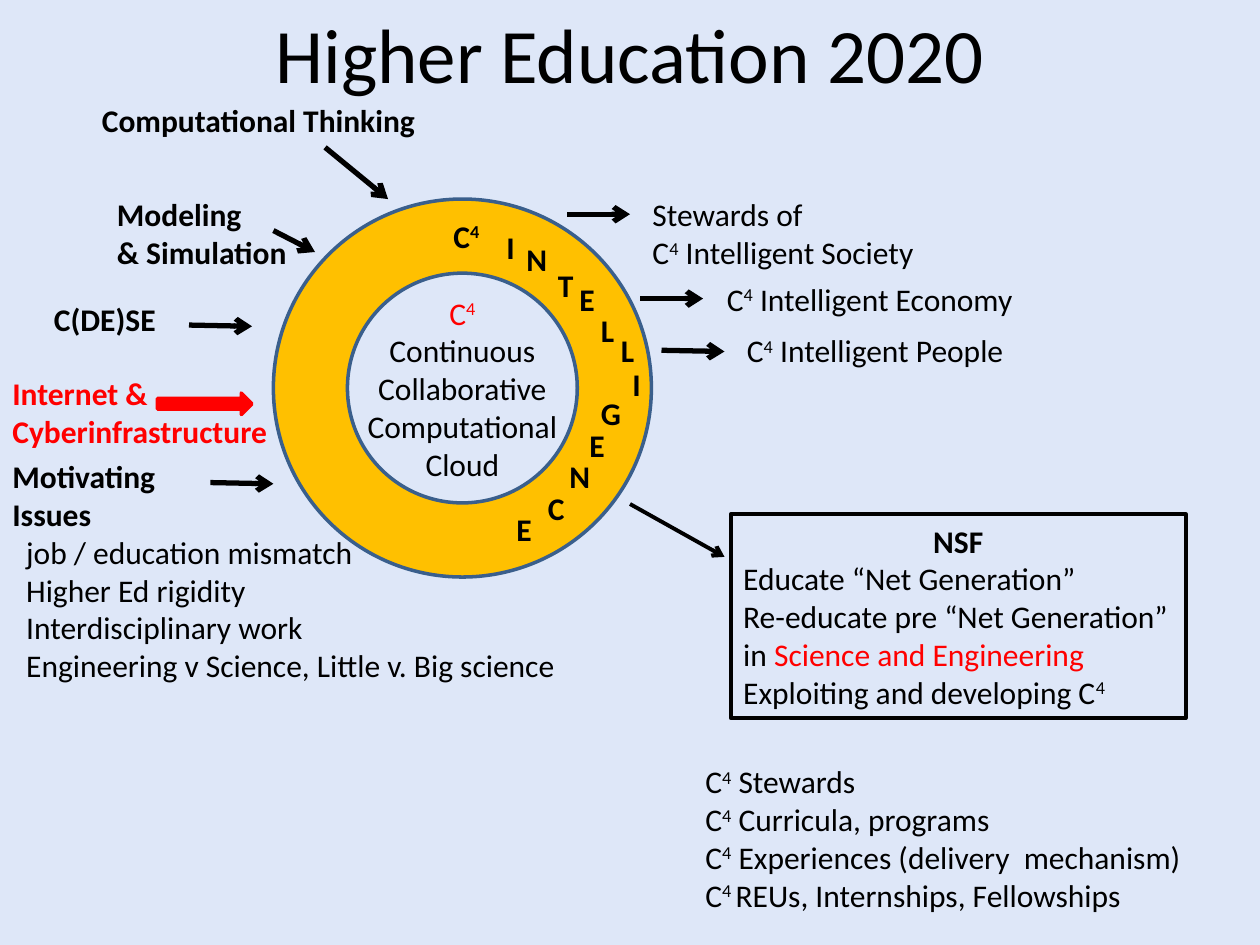
from dataclasses import dataclass
from typing import NamedTuple

from lxml import etree
from pptx import Presentation
from pptx import util as u
from pptx.dml.color import RGBColor
from pptx.enum import shapes, text
from pptx.oxml.ns import qn

COLORS = {"background": "DEE7F8", "ring": "FFC000", "ring_line": "3A5F8C",
          "black": "000000", "red": "FF0000"}
FONT = "Calibri"


class Run(NamedTuple):
    text: str
    color: str = "black"
    bold: bool = False
    raised: bool = False


class Line(NamedTuple):
    runs: list[Run]
    centered: bool = False
    indent: float = 0


@dataclass
class Label:
    left: float
    top: float
    width: float
    height: float
    lines: list[Line]
    wrap: bool = False


class Arrow(NamedTuple):
    x1: float
    y1: float
    x2: float
    y2: float
    weight: float = 3


def line(words: str, color: str = "black", bold: bool = False,
         centered: bool = False, indent: float = 0) -> Line:
    return Line([Run(words, color, bold)], centered, indent)


def c4(rest: str = "", color: str = "black", bold: bool = False,
       before: str = "", centered: bool = False, power: str = "4") -> Line:
    """A line holding C with a raised 4."""
    runs = [Run(before + "C", color, bold), Run(power, color, bold, True)]
    if rest:
        runs.append(Run(rest, color, bold))
    return Line(runs, centered)


def rgb(name: str) -> RGBColor:
    return RGBColor.from_string(COLORS[name])


def write(frame, lines: list[Line], size: float = 18) -> None:
    for number, item in enumerate(lines):
        paragraph = frame.add_paragraph() if number else frame.paragraphs[0]
        paragraph.alignment = (text.PP_ALIGN.CENTER if item.centered
                               else text.PP_ALIGN.LEFT)
        if item.indent:
            paragraph._p.get_or_add_pPr().set("marL", str(u.Inches(item.indent)))
        for part in item.runs:
            run = paragraph.add_run()
            run.text = part.text
            run.font.name = FONT
            run.font.size = u.Pt(size)
            run.font.bold = part.bold
            run.font.color.rgb = rgb(part.color)
            if part.raised:
                run._r.get_or_add_rPr().set("baseline", "30000")


def fit_to_text(frame, wrap: bool = False) -> None:
    frame.word_wrap = wrap
    frame.auto_size = text.MSO_AUTO_SIZE.SHAPE_TO_FIT_TEXT


def add_label(slide, label: Label) -> None:
    box = slide.shapes.add_textbox(u.Inches(label.left), u.Inches(label.top),
                                   u.Inches(label.width), u.Inches(label.height))
    fit_to_text(box.text_frame, label.wrap)
    write(box.text_frame, label.lines)


def add_outline(slide, kind, left: float, top: float, width: float, height: float,
                fill: str | None, border: str, weight: float):
    shape = slide.shapes.add_shape(kind, u.Inches(left), u.Inches(top),
                                   u.Inches(width), u.Inches(height))
    shape.shadow.inherit = False
    if fill:
        shape.fill.solid()
        shape.fill.fore_color.rgb = rgb(fill)
    else:
        shape.fill.background()
    shape.line.color.rgb = rgb(border)
    shape.line.width = u.Pt(weight)
    return shape


def add_arrow(slide, arrow: Arrow) -> None:
    connector = slide.shapes.add_connector(
        shapes.MSO_CONNECTOR.STRAIGHT, u.Inches(arrow.x1), u.Inches(arrow.y1),
        u.Inches(arrow.x2), u.Inches(arrow.y2))
    connector.line.color.rgb = rgb("black")
    connector.line.width = u.Pt(arrow.weight)
    etree.SubElement(connector.line._get_or_add_ln(), qn("a:tailEnd"), type="arrow")
    etree.SubElement(connector._element.spPr, qn("a:effectLst"))


RING_LETTERS = [("I", 3.92, 1.76), ("N", 4.08, 1.86), ("T", 4.33, 2.06),
                ("E", 4.5, 2.17), ("L", 4.67, 2.42), ("L", 4.83, 2.58),
                ("I", 4.92, 2.85), ("G", 4.67, 3.08), ("E", 4.58, 3.33),
                ("N", 4.42, 3.58), ("C", 4.25, 3.83), ("E", 4, 4)]

ISSUES = ["job / education mismatch", "Higher Ed rigidity", "Interdisciplinary work",
          "Engineering v Science, Little v. Big science"]

LABELS = [
    # Inputs on the left
    Label(0.71, 0.75, 2.71, 0.4, [line("Computational Thinking", bold=True)]),
    Label(0.83, 1.5, 1.56, 0.71, [line("Modeling", bold=True),
                                  line("& Simulation", bold=True)]),
    Label(0.33, 2.33, 1.01, 0.4, [line("C(DE)SE", bold=True)]),
    Label(0, 2.92, 2.24, 0.71, [line("Internet &", "red", True),
                                line("Cyberinfrastructure", "red", True)]),
    Label(0, 3.58, 4.57, 1.92, [line("Motivating", bold=True),
                                line("Issues", bold=True),
                                *(line(issue, indent=0.11) for issue in ISSUES)]),
    # Outcomes on the right
    Label(5.08, 1.5, 2.31, 0.71, [line("Stewards of"), c4(" Intelligent Society")]),
    Label(5.67, 2.17, 2.51, 0.4, [c4(" Intelligent Economy")]),
    Label(5.83, 2.58, 2.27, 0.4, [c4(" Intelligent People")]),
    Label(5.5, 6, 4.03, 1.31, [c4(" Stewards"), c4(" Curricula, programs"),
                               c4(" Experiences (delivery  mechanism)"),
                               c4("REUs, Internships, Fellowships", power="4 ")]),
]

ARROWS = [
    Arrow(2.58, 1.17, 3.08, 1.58), Arrow(2.17, 1.83, 2.5, 2),
    Arrow(1.5, 2.58, 2, 2.59), Arrow(1.67, 3.83, 2.17, 3.84),
    Arrow(4.5, 1.7, 5, 1.7), Arrow(5.08, 2.37, 5.58, 2.37),
    Arrow(5.25, 2.78, 5.75, 2.79), Arrow(5, 4, 5.75, 4.42, 2.25),
]


def main() -> None:
    presentation = Presentation()
    presentation.slide_width, presentation.slide_height = u.Inches(10), u.Inches(7.5)
    slide = presentation.slides.add_slide(presentation.slide_layouts[6])
    slide.background.fill.solid()
    slide.background.fill.fore_color.rgb = rgb("background")

    # Ring with the four words in its centre
    ring = add_outline(slide, shapes.MSO_SHAPE.DONUT, 2.17, 1.58, 3, 3,
                       "ring", "ring_line", 2)
    ring.adjustments[0] = 0.196
    ring.text_frame.vertical_anchor = text.MSO_ANCHOR.MIDDLE
    words = ["Continuous", "Collaborative", "Computational", "Cloud"]
    write(ring.text_frame, [c4(color="red", centered=True),
                            *(line(word, centered=True) for word in words)])

    # Letters around the ring
    add_label(slide, Label(3.5, 1.67, 0.42, 0.4, [c4(bold=True)]))
    for number, (letter, left, top) in enumerate(RING_LETTERS):
        width = 0.33 if number else 0.25
        add_label(slide, Label(left, top, width, 0.4, [line(letter, bold=True)], True))

    # Labels and arrows
    for label in LABELS:
        add_label(slide, label)
    for arrow in ARROWS:
        add_arrow(slide, arrow)
    add_outline(slide, shapes.MSO_SHAPE.RIGHT_ARROW, 1.25, 3.12, 0.75, 0.17,
                "red", "red", 2)

    # NSF box
    nsf = add_outline(slide, shapes.MSO_SHAPE.RECTANGLE, 5.8, 4.08, 3.61, 1.62,
                      None, "black", 2.25)
    fit_to_text(nsf.text_frame)
    write(nsf.text_frame, [
        line("NSF", bold=True, centered=True), line("Educate “Net Generation”"),
        line("Re-educate pre “Net Generation”"),
        Line([Run("in "), Run("Science and Engineering", "red")]),
        c4(before="Exploiting and developing ")])

    # Title
    title = slide.shapes.add_textbox(u.Inches(0.5), 0, u.Inches(9), u.Inches(0.83))
    title.text_frame.word_wrap = True
    title.text_frame.vertical_anchor = text.MSO_ANCHOR.MIDDLE
    write(title.text_frame, [line("Higher Education 2020", centered=True)], 44)

    presentation.save("out.pptx")


if __name__ == "__main__":
    main()
